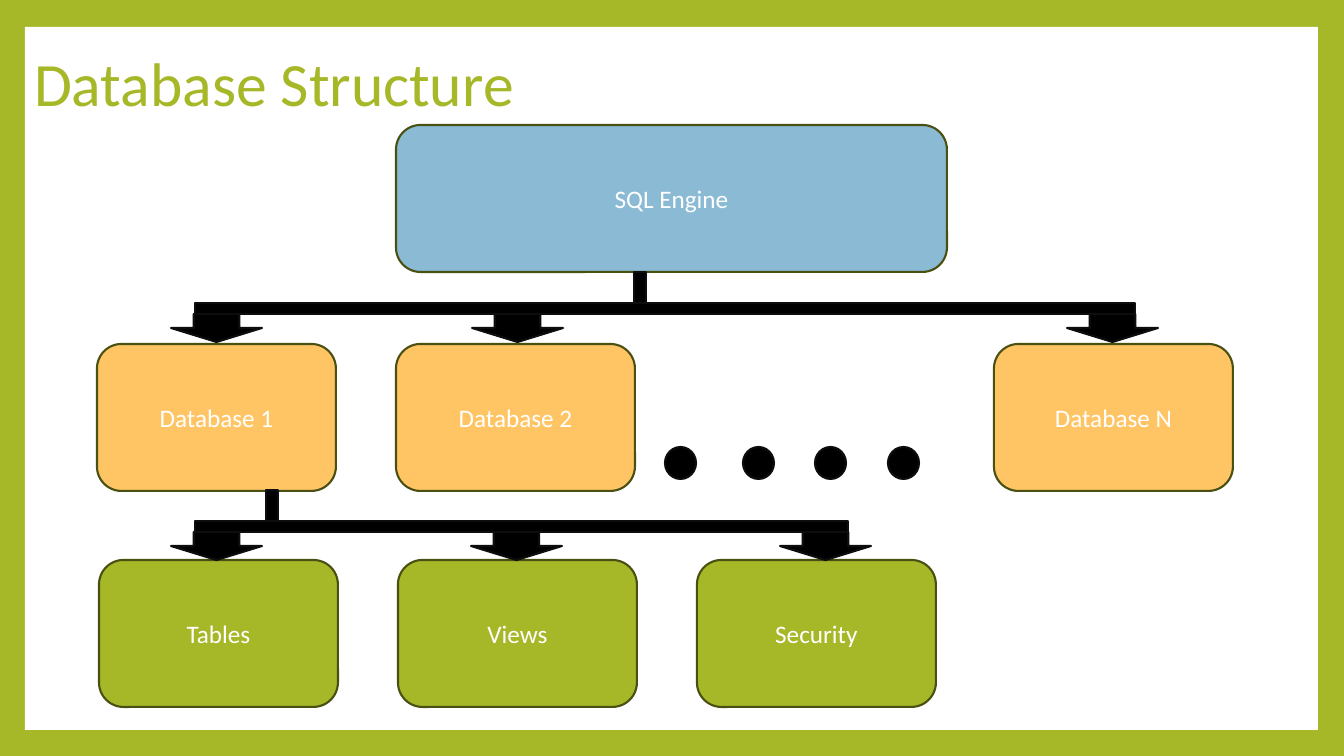
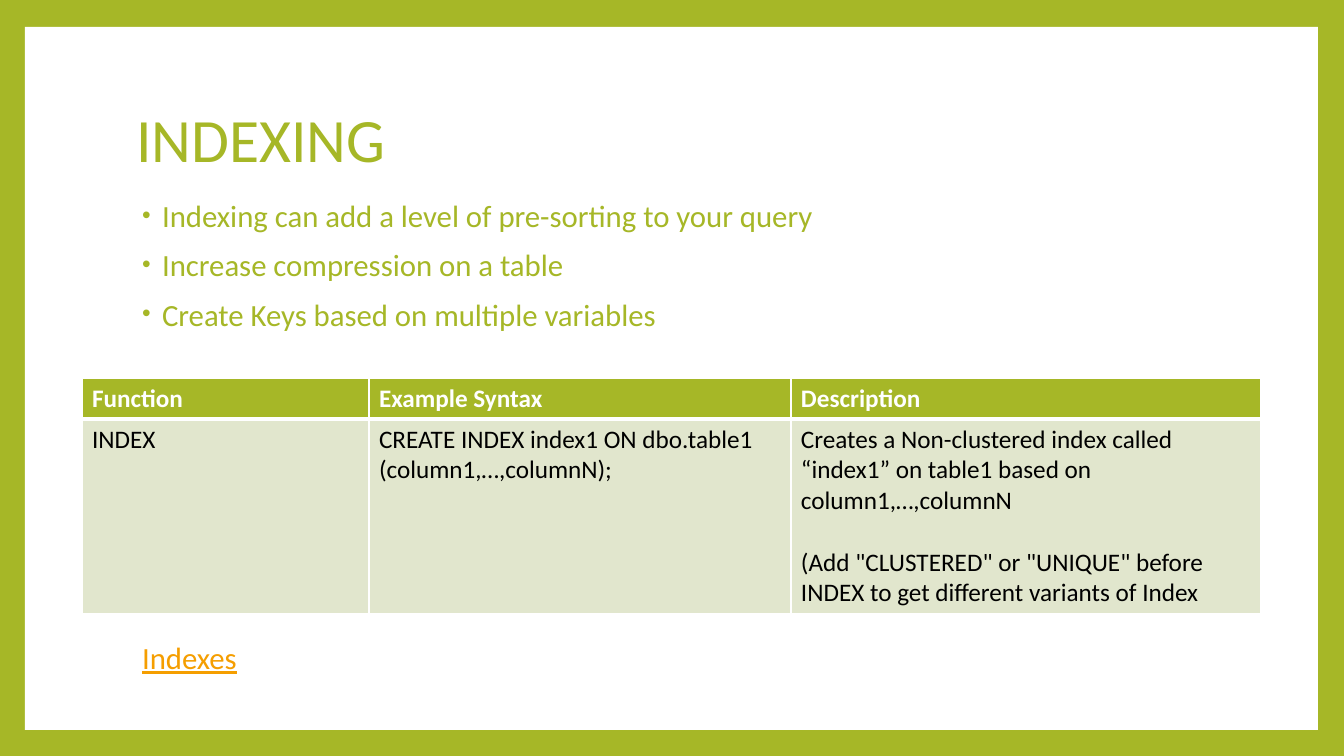
"""Builds two slides on databases: a structure diagram and an indexing overview."""
from lxml import etree
from pptx import Presentation
from pptx.dml.color import RGBColor
from pptx.enum.shapes import MSO_SHAPE
from pptx.enum.text import MSO_ANCHOR, MSO_AUTO_SIZE, PP_ALIGN
from pptx.oxml import parse_xml
from pptx.oxml.ns import nsdecls, qn
from pptx.util import Emu, Pt

RECTANGLE = MSO_SHAPE.RECTANGLE
ROUNDED = MSO_SHAPE.ROUNDED_RECTANGLE
DOWN_ARROW = MSO_SHAPE.DOWN_ARROW
DOT = MSO_SHAPE.FLOWCHART_CONNECTOR
LEFT, CENTER = PP_ALIGN.LEFT, PP_ALIGN.CENTER
TOP, MIDDLE = MSO_ANCHOR.TOP, MSO_ANCHOR.MIDDLE
NO_AUTOFIT = MSO_AUTO_SIZE.NONE

PX = 914400 / 100.8
THEME = {
    "font": "Calibri",
    "green": "A6B727", "blue": "8ABAD4", "orange": "FFC565",
    "outline": "495011", "black": "000000", "ink": "0D0D0D",
    "white": "FFFFFF", "pale": "E1E6CD", "link": "F59E00",
    "title": 44, "body": 22, "label": 18, "line": 1.5,
}


def format_paragraph(paragraph, size, color, font=(), **layout):
    values = {"name": THEME["font"], "size": Pt(THEME[size]), **dict(font)}
    for name, value in values.items():
        setattr(paragraph.font, name, value)
    paragraph.font.color.rgb = RGBColor.from_string(THEME[color])
    for name, value in layout.items():
        setattr(paragraph, name, value)


def add_block(slide, kind, box, fill, outline=None, label=None):
    shape = slide.shapes.add_shape(kind, *(Emu(round(n * PX)) for n in box))
    shape.shadow.inherit = False
    shape.fill.solid()
    shape.fill.fore_color.rgb = RGBColor.from_string(THEME[fill])
    if outline:
        shape.line.color.rgb = RGBColor.from_string(THEME[outline])
        shape.line.width = Pt(THEME["line"])
    else:
        shape.line.fill.background()
    if label:
        shape.text_frame.text = label
        shape.text_frame.vertical_anchor = MIDDLE
        format_paragraph(shape.text_frame.paragraphs[0], "label", "white", alignment=CENTER)
    return shape


presentation = Presentation()
presentation.slide_width = Emu(round(1344 * PX))
presentation.slide_height = Emu(round(756 * PX))
structure = presentation.slides.add_slide(presentation.slide_layouts[5])
indexing = presentation.slides.add_slide(presentation.slide_layouts[1])

master = presentation.slide_master
master.background.fill.solid()
master.background.fill.fore_color.rgb = RGBColor.from_string(THEME["green"])
panel = add_block(structure, RECTANGLE, (25, 27, 1293, 703), "white")
panel.element.nvSpPr.cNvPr.set("id", "100")
master.shapes.element.insert(2, panel.element)

body = indexing.placeholders[1]
for placeholder, box, text, anchor in (
    (structure.shapes.title, (24, 12, 1089, 149), "Database Structure", MIDDLE),
    (indexing.shapes.title, (126, 68, 1089, 149), "INDEXING", MIDDLE),
    (body, (127, 199, 731, 515),
     "Indexing can add a level of pre-sorting to your query\n"
     "Increase compression on a table\n"
     "Create Keys based on multiple variables\n"
     "Indexes", TOP),
):
    for name, value in zip(("left", "top", "width", "height"), box):
        setattr(placeholder, name, Emu(round(value * PX)))
    frame = placeholder.text_frame
    frame.text = text
    for name, value in {"word_wrap": True, "auto_size": NO_AUTOFIT,
                        "vertical_anchor": anchor}.items():
        setattr(frame, name, value)
    if placeholder is not body:
        format_paragraph(frame.paragraphs[0], "title", "green", alignment=LEFT, line_spacing=0.9)

BOX_WIDTH, BOX_HEIGHT, COLUMN_PITCH = 239, 147, 299
add_block(structure, ROUNDED, (396, 125, 551, BOX_HEIGHT), "blue", "outline", "SQL Engine")
for left, top, fill, labels in (
    (97, 344, "orange", {0: "Database 1", 1: "Database 2", 3: "Database N"}),
    (99, 560, "green", {0: "Tables", 1: "Views", 2: "Security"}),
):
    for column, label in labels.items():
        box = (left + column * COLUMN_PITCH, top, BOX_WIDTH, BOX_HEIGHT)
        add_block(structure, ROUNDED, box, fill, "outline", label)

BAR_LEFT, BAR_HEIGHT, STEM_HEIGHT = 195, 11, 31
for bar_top, bar_width, stem_left, arrow_lefts in (
    (303, 940, 634, (171, 472, 1067)),
    (521, 653, 266, (171, 471, 780)),
):
    for arrow_left in arrow_lefts:
        add_block(structure, DOWN_ARROW, (arrow_left, bar_top + BAR_HEIGHT, 91, 28), "black", "ink")
    add_block(structure, RECTANGLE, (BAR_LEFT, bar_top, bar_width, BAR_HEIGHT), "black", "ink")
    add_block(structure, RECTANGLE, (stem_left, bar_top - STEM_HEIGHT, 12, STEM_HEIGHT), "black", "ink")
for dot_left in (665, 743, 815, 888):
    add_block(structure, DOT, (dot_left, 447, 31, 32), "black", "ink")

*points, link = body.text_frame.paragraphs
for point in points:
    format_paragraph(point, "body", "green", alignment=LEFT, line_spacing=0.8, space_before=Pt(14))
format_paragraph(link, "body", "link", {"underline": True}, alignment=LEFT,
                 line_spacing=0.8, space_before=Pt(224))
for paragraph in (*points, link):
    margin, indent = (5, 0) if paragraph is link else (25, -20)
    properties = paragraph._p.get_or_add_pPr()
    properties.set("marL", str(round(margin * PX)))
    properties.set("indent", str(round(indent * PX)))
    if paragraph is link:
        etree.SubElement(properties, qn("a:buNone"))
    else:
        color = etree.SubElement(properties, qn("a:buClr"))
        etree.SubElement(color, qn("a:srgbClr"), val=THEME["green"])
        etree.SubElement(properties, qn("a:buSzPct"), val="80000")
        etree.SubElement(properties, qn("a:buChar"), char="•")

COLUMN_WIDTHS, ROW_HEIGHTS = (287, 422, 470), (41, 192)
ROWS = (
    ("Function", "Example Syntax", "Description"),
    ("INDEX", "CREATE INDEX index1 ON dbo.table1 (column1,…,columnN);",
     "Creates a Non-clustered index called “index1” on table1 based on column1,…,columnN\n"
     "(Add \"CLUSTERED\" or \"UNIQUE\" before INDEX to get different variants of Index"),
)
table_box = (82, 378, sum(COLUMN_WIDTHS), sum(ROW_HEIGHTS))
table = indexing.shapes.add_table(
    len(ROWS), len(COLUMN_WIDTHS), *(Emu(round(n * PX)) for n in table_box)).table
table.horz_banding = False
for column, width in zip(table.columns, COLUMN_WIDTHS):
    column.width = Emu(round(width * PX))
for row_index, (row, height, texts) in enumerate(zip(table.rows, ROW_HEIGHTS, ROWS)):
    row.height = Emu(round(height * PX))
    header = row_index == 0
    edges = {"lnL": 1, "lnR": 1, "lnT": 1 if header else 3, "lnB": 3 if header else 1}
    for cell, text in zip(row.cells, texts):
        for edge, points_wide in edges.items():
            cell._tc.get_or_add_tcPr().append(parse_xml(
                f'<a:{edge} {nsdecls("a")} w="{Pt(points_wide)}"><a:solidFill>'
                f'<a:srgbClr val="{THEME["white"]}"/></a:solidFill></a:{edge}>'))
        cell.fill.solid()
        cell.fill.fore_color.rgb = RGBColor.from_string(THEME["green" if header else "pale"])
        cell.text = text
        for index, paragraph in enumerate(cell.text_frame.paragraphs):
            format_paragraph(paragraph, "label", "white" if header else "black",
                             {"bold": header}, space_before=Pt(22 * index))

presentation.save("out.pptx")
